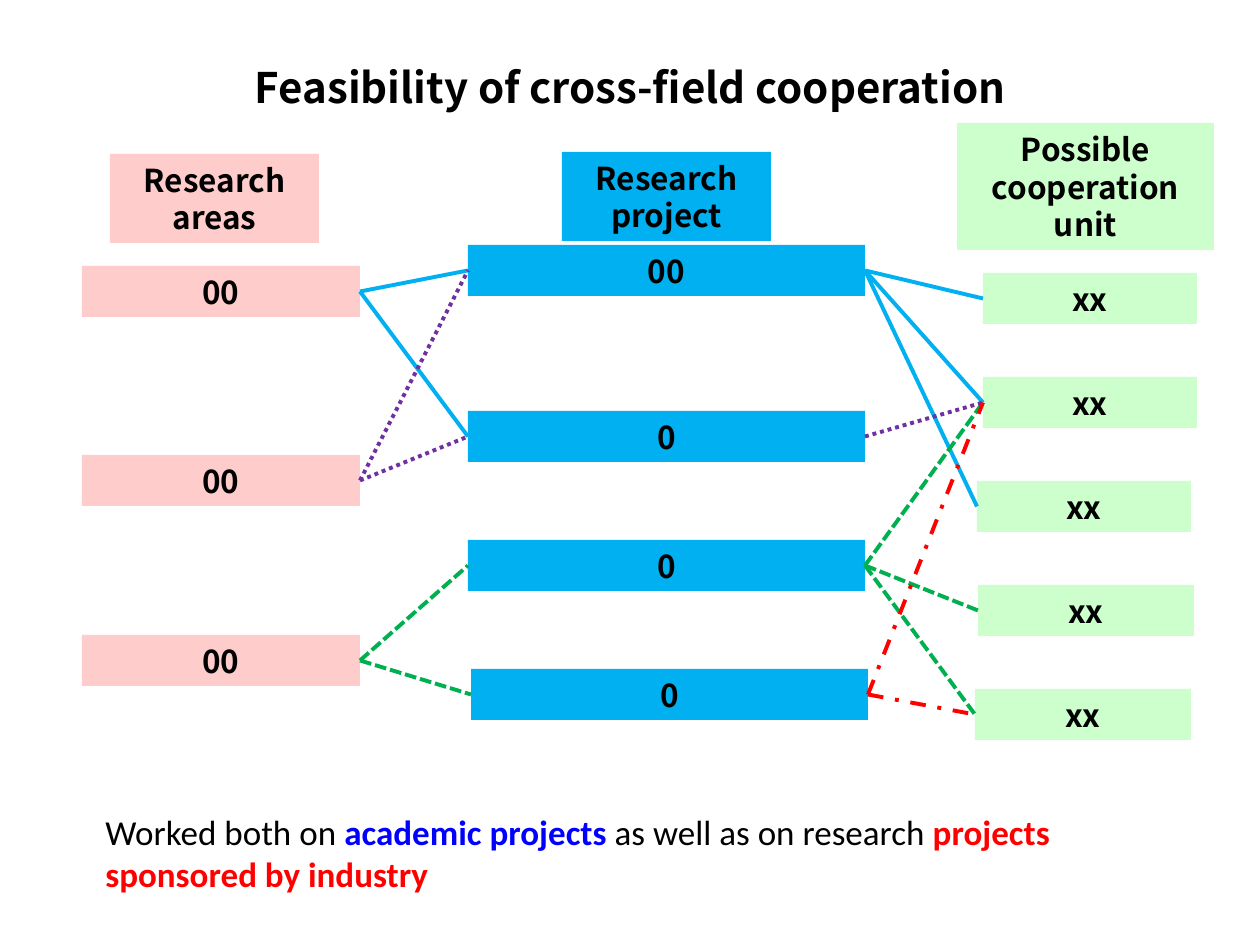
import pptx
import pptx.dml.color
import pptx.enum.dml
import pptx.enum.shapes
import pptx.enum.text
import pptx.oxml.ns
import pptx.util
from lxml import etree

EMU_PER_PX = 914400 / 126
HEADING_FONT = "Noto Sans CJK SC"
BOX_HEIGHT = 51
LEFT_SIDE, RIGHT_SIDE = 1, 3

BLACK, RED, BLUE = "000000", "FF0000", "0000FF"
PINK, SKY, MINT = "FFCCCC", "00B0F0", "CCFFCC"
GREEN, PURPLE = "00B050", "7030A0"

DASH = pptx.enum.dml.MSO_LINE
LINE_STYLES = {
    "sky": (SKY, None),
    "green": (GREEN, DASH.SQUARE_DOT),
    "purple": (PURPLE, DASH.ROUND_DOT),
    "red": (RED, DASH.DASH_DOT),
}

# left, top, width, text
AREAS = [(82, top, 278, "00") for top in (266, 455, 635)]
PROJECTS = [(468, 245, 397, "00"), (468, 411, 397, "0"),
            (468, 540, 397, "0"), (471, 669, 397, "0")]
UNITS = [(left, 273 + 104 * row, width, "xx") for row, (left, width) in enumerate(
    [(983, 214), (983, 214), (977, 214), (978, 216), (975, 216)])]

# start row, end row, line style
AREA_TO_PROJECT = [(0, 0, "sky"), (0, 1, "sky"), (2, 2, "green"),
                   (2, 3, "green"), (1, 1, "purple"), (1, 0, "purple")]
PROJECT_TO_UNIT = [(0, 0, "sky"), (0, 1, "sky"), (0, 2, "sky"),
                   (2, 1, "green"), (2, 4, "green"), (3, 4, "red"),
                   (1, 1, "purple"), (2, 3, "green"), (3, 1, "red")]


def px(length):
    return pptx.util.Emu(round(length * EMU_PER_PX))


def rgb(value):
    return pptx.dml.color.RGBColor.from_string(value)


def add_run(paragraph, text, size=18, font=HEADING_FONT, color=BLACK, bold=True):
    run = paragraph.add_run()
    run.text = text
    run.font.size = pptx.util.Pt(size)
    run.font.name = font
    run.font.bold = bold
    run.font.color.rgb = rgb(color)
    # The same face serves East Asian text.
    east_asian = etree.SubElement(run.font._element, pptx.oxml.ns.qn("a:ea"))
    east_asian.set("typeface", font)


def add_box(slide, left, top, width, text, fill, height=BOX_HEIGHT):
    box = slide.shapes.add_shape(pptx.enum.shapes.MSO_SHAPE.RECTANGLE,
                                 px(left), px(top), px(width), px(height))
    box.shadow.inherit = False
    box.fill.solid()
    box.fill.fore_color.rgb = rgb(fill)
    box.line.fill.background()
    frame = box.text_frame
    frame.word_wrap = True
    frame.vertical_anchor = pptx.enum.text.MSO_ANCHOR.MIDDLE
    paragraph = frame.paragraphs[0]
    paragraph.alignment = pptx.enum.text.PP_ALIGN.CENTER
    paragraph.line_spacing = pptx.util.Pt(21.6)
    add_run(paragraph, text)
    return box


def add_column(slide, rows, fill):
    return [add_box(slide, *row, fill) for row in rows]


def add_text(slide, left, top, width, height, runs, centered=False):
    """Add a text box from (text, format) pairs."""
    area = slide.shapes.add_textbox(px(left), px(top), px(width), px(height))
    frame = area.text_frame
    frame.word_wrap = True
    paragraph = frame.paragraphs[0]
    if centered:
        frame.vertical_anchor = pptx.enum.text.MSO_ANCHOR.MIDDLE
        paragraph.alignment = pptx.enum.text.PP_ALIGN.CENTER
    for text, style in runs:
        add_run(paragraph, text, **style)


def join(slide, start, end, color, dash):
    """Link the right side of start to the left side of end."""
    link = slide.shapes.add_connector(
        pptx.enum.shapes.MSO_CONNECTOR.STRAIGHT, 0, 0, 0, 0)
    link.begin_connect(start, RIGHT_SIDE)
    link.end_connect(end, LEFT_SIDE)
    link.line.color.rgb = rgb(color)
    link.line.width = pptx.util.Pt(2.25)
    if dash is not None:
        link.line.dash_style = dash
    etree.SubElement(link._element.spPr, pptx.oxml.ns.qn("a:effectLst"))


def join_columns(slide, starts, ends, links):
    for start, end, style in links:
        join(slide, starts[start], ends[end], *LINE_STYLES[style])


def main():
    deck = pptx.Presentation()
    deck.slide_width, deck.slide_height = px(1260), px(945)
    slide = deck.slides.add_slide(deck.slide_layouts[6])

    add_text(slide, 63, 8, 1134, 157,
             [("Feasibility of cross-field cooperation", {"size": 24})],
             centered=True)

    add_box(slide, 110, 154, 209, "Research areas", PINK, height=89)
    add_box(slide, 562, 152, 209, "Research project", SKY, height=89)
    add_box(slide, 957, 123, 257, "Possible cooperation unit", MINT, height=127)

    areas = add_column(slide, AREAS, PINK)
    projects = add_column(slide, PROJECTS, SKY)
    units = add_column(slide, UNITS, MINT)
    join_columns(slide, areas, projects, AREA_TO_PROJECT)
    join_columns(slide, projects, units, PROJECT_TO_UNIT)

    body = {"size": 20, "font": "Calibri"}
    add_text(slide, 93, 804, 1074, 97, [
        ("Worked both on ", {**body, "bold": False}),
        ("academic projects ", {**body, "color": BLUE}),
        ("as well as on research ", {**body, "bold": False}),
        ("projects sponsored by industry", {**body, "color": RED}),
    ])
    deck.save("out.pptx")


if __name__ == "__main__":
    main()
